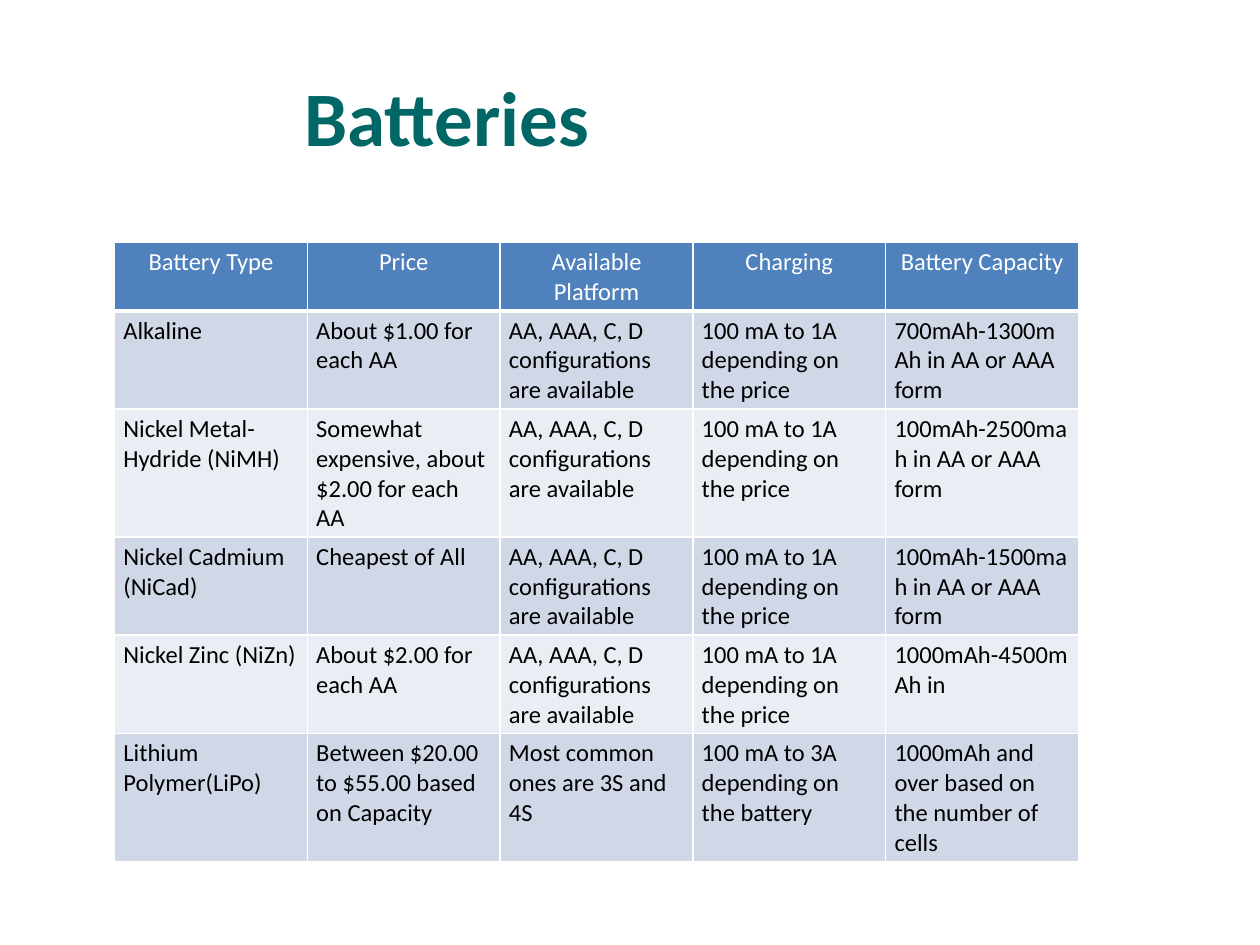
from lxml.etree import SubElement
from pptx import Presentation
from pptx.dml.color import RGBColor
from pptx.enum.text import MSO_ANCHOR as Anchor, PP_ALIGN as Align
from pptx.oxml.ns import qn
from pptx.util import Inches, Pt

SLIDE_W, SLIDE_H = Inches(10), Inches(7.5)
COLORS = {
    "title": "006666",
    "header": "4F81BD",
    "odd_row": "D0D8E8",
    "even_row": "E9EDF4",
    "grid": "FFFFFF",
    "header_text": "FFFFFF",
    "body_text": "000000",
}
PLATFORMS = "AA, AAA, C, D configurations are available"
CHARGING = "100 mA to 1A depending on the price"
HEADINGS = ["Battery Type", "Price", "Available Platform", "Charging", "Battery Capacity"]
BATTERIES = [
    ["Alkaline", "About $1.00 for each AA", PLATFORMS, CHARGING,
     "700mAh-1300mAh in AA or AAA form"],
    ["Nickel Metal-Hydride (NiMH)", "Somewhat expensive, about $2.00 for each AA",
     PLATFORMS, CHARGING, "100mAh-2500mah in AA or AAA form"],
    ["Nickel Cadmium (NiCad)", "Cheapest of All", PLATFORMS, CHARGING,
     "100mAh-1500mah in AA or AAA form"],
    ["Nickel Zinc (NiZn)", "About $2.00 for each AA", PLATFORMS, CHARGING,
     "1000mAh-4500mAh in"],
    ["Lithium Polymer(LiPo)", "Between $20.00 to $55.00 based on Capacity",
     "Most common ones are 3S and 4S", "100 mA to 3A depending on the battery",
     "1000mAh and over based on the number of cells"],
]
COLUMN_W = Inches(1.53)
ROW_HEIGHTS = [0.53, 0.75, 0.97, 0.75, 0.75, 0.75]


def write_text(frame, text, *, size, color, bold=False, align=Align.LEFT):
    frame.word_wrap = True
    paragraph = frame.paragraphs[0]
    paragraph.alignment = align
    run = paragraph.add_run()
    run.text = text
    font = run.font
    font.name, font.size, font.bold = "Calibri", Pt(size), bold
    font.color.rgb = RGBColor.from_string(COLORS[color])


def add_title(slide, text):
    title = slide.shapes.add_textbox(
        int(SLIDE_W * 0.117), int(SLIDE_H * 0.067),
        int(SLIDE_W * 0.475), int(SLIDE_H * 0.112))
    title.text_frame.vertical_anchor = Anchor.MIDDLE
    write_text(title.text_frame, text, size=44, color="title", bold=True, align=Align.CENTER)


def set_borders(cell, bottom):
    """Draw 1 pt grid lines, with the given width in points below the cell."""
    properties = cell._tc.get_or_add_tcPr()
    for side, width in (("L", 1), ("R", 1), ("T", 1), ("B", bottom)):
        line = SubElement(properties, qn(f"a:ln{side}"), w=str(Pt(width)))
        fill = SubElement(line, qn("a:solidFill"))
        SubElement(fill, qn("a:srgbClr"), val=COLORS["grid"])


def fill_cell(cell, text, *, fill, bottom=1, **text_format):
    cell.margin_left = cell.margin_right = Inches(0.07)
    cell.margin_top = cell.margin_bottom = Inches(0.04)
    set_borders(cell, bottom)
    cell.fill.solid()
    cell.fill.fore_color.rgb = RGBColor.from_string(COLORS[fill])
    write_text(cell.text_frame, text, size=14, **text_format)


def add_battery_table(slide):
    table = slide.shapes.add_table(
        len(BATTERIES) + 1, len(HEADINGS),
        int(SLIDE_W * 0.091), int(SLIDE_H * 0.256),
        COLUMN_W * len(HEADINGS), Inches(sum(ROW_HEIGHTS))).table
    for column in table.columns:
        column.width = COLUMN_W
    for row, height in zip(table.rows, ROW_HEIGHTS):
        row.height = Inches(height)

    for col, heading in enumerate(HEADINGS):
        fill_cell(table.cell(0, col), heading, fill="header", bottom=3,
                  color="header_text", align=Align.CENTER)
    for row, battery in enumerate(BATTERIES, start=1):
        band = "odd_row" if row % 2 else "even_row"
        for col, detail in enumerate(battery):
            fill_cell(table.cell(row, col), detail, fill=band, color="body_text")


def main():
    deck = Presentation()
    deck.slide_width, deck.slide_height = SLIDE_W, SLIDE_H
    slide = deck.slides.add_slide(deck.slide_layouts[6])
    add_title(slide, "Batteries")
    add_battery_table(slide)
    deck.save("out.pptx")


if __name__ == "__main__":
    main()
